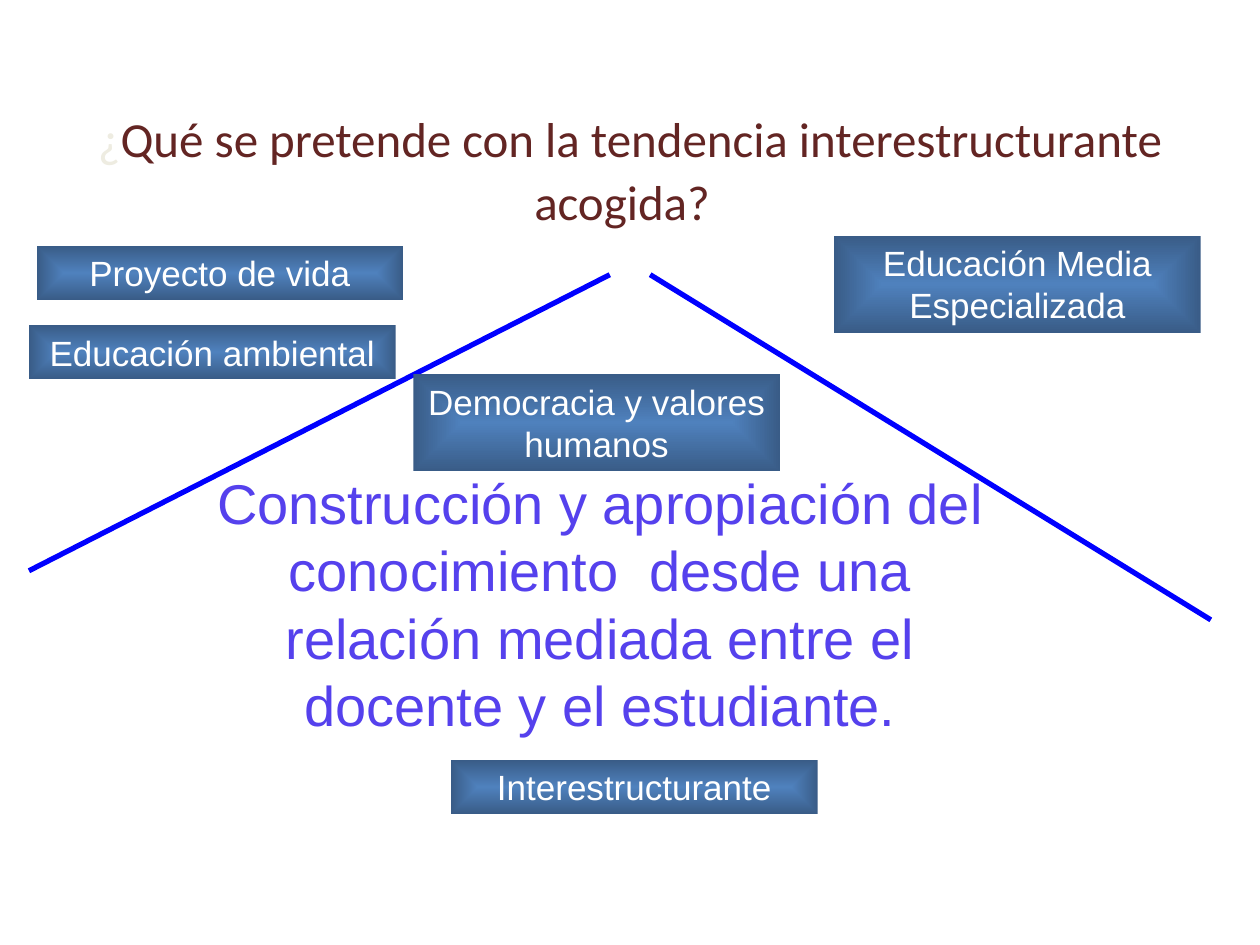
import pptx
import pptx.util
import pptx.dml.color
import pptx.enum.shapes
import pptx.enum.text
import pptx.oxml
import pptx.oxml.ns
import lxml.etree

COLS, ROWS = 100, 75
SHAPES = pptx.enum.shapes.MSO_SHAPE
ANCHOR = pptx.enum.text.MSO_ANCHOR
FIT = pptx.enum.text.MSO_AUTO_SIZE


def rgb(value):
    return pptx.dml.color.RGBColor.from_string(value)


def write(tf, *runs, font="Arial", size=20, color="FFFFFF", spacing=None,
          anchor=ANCHOR.TOP, fit=FIT.SHAPE_TO_FIT_TEXT):
    """Fill a frame with one centred paragraph of (text, format) runs."""
    tf.word_wrap = True
    tf.auto_size = fit
    tf.vertical_anchor = anchor
    p = tf.paragraphs[0]
    p.alignment = pptx.enum.text.PP_ALIGN.CENTER
    if spacing:
        p.line_spacing = spacing
    for text, style in runs:
        r = p.add_run()
        r.text = text
        r.font.name = font
        r.font.size = pptx.util.Pt(style.get("size", size))
        r.font.color.rgb = rgb(style.get("color", color))


class Board:
    """Style and current slide; lengths are grid columns and rows."""
    inner, outer, line_color = "4F81BD", "395C87", "0000FF"
    box_width = 29.1

    def __init__(self, prs):
        self.prs = prs
        self.slide = prs.slides.add_slide(prs.slide_layouts[6])

    def place(self, *lengths):
        units = (self.prs.slide_width / COLS, self.prs.slide_height / ROWS)
        return [round(n * units[i % 2]) for i, n in enumerate(lengths)]

    def text(self, left, top, width, height, *runs, **style):
        tb = self.slide.shapes.add_textbox(*self.place(left, top, width, height))
        write(tb.text_frame, *runs, **style)

    def box(self, left, top, text, lines=1):
        height = 4.3 if lines == 1 else 7.7
        sp = self.slide.shapes.add_shape(
            SHAPES.RECTANGLE, *self.place(left, top, self.box_width, height))
        sp.shadow.inherit = False
        sp.line.fill.background()
        self.glow(sp)
        write(sp.text_frame, (text, {}))

    def glow(self, sp):
        """Gradient that runs from the centre out to the edges."""
        sp.fill.gradient()
        stops = sp.fill.gradient_stops
        for stop, position, color in zip(stops, (0, 1), (self.inner, self.outer)):
            stop.position = position
            stop.color.rgb = rgb(color)
        qn = pptx.oxml.ns.qn
        grad = sp._element.spPr.find(qn("a:gradFill"))
        lin = grad.find(qn("a:lin"))
        path = lxml.etree.Element(qn("a:path"), path="shape")
        half = {side: "50000" for side in "ltrb"}
        lxml.etree.SubElement(path, qn("a:fillToRect"), **half)
        grad.replace(lin, path)

    def line(self, x1, y1, x2, y2):
        c = self.slide.shapes.add_connector(
            pptx.enum.shapes.MSO_CONNECTOR.STRAIGHT, *self.place(x1, y1, x2, y2))
        c.line.color.rgb = rgb(self.line_color)
        c.line.width = pptx.util.Pt(3)
        lxml.etree.SubElement(c._element.spPr, pptx.oxml.ns.qn("a:effectLst"))


def main():
    prs = pptx.Presentation()
    prs.slide_width = pptx.util.Inches(10)
    prs.slide_height = pptx.util.Inches(7.5)
    board = Board(prs)

    # Title
    board.text(5, 7.8, 90, 12.5,
               ("¿", {"color": "EEECE1"}),
               ("Qué se pretende con la tendencia interestructurante acogida?", {}),
               (" ", {"size": 40}),
               font="Calibri", size=28, color="632523", spacing=0.8,
               anchor=ANCHOR.MIDDLE, fit=FIT.NONE)

    # Roof lines
    board.line(48.4, 21.8, 2.3, 45.3)
    board.line(51.6, 21.8, 96.1, 49.2)

    # Central statement
    board.text(15.6, 36.7, 64.1, 22.6,
               ("Construcción y apropiación del conocimiento  desde una "
                "relación mediada entre el docente y el estudiante.", {}),
               size=32, color="5541ED")

    # Topic boxes
    board.box(35.8, 60.3, "Interestructurante")
    board.box(2.9, 19.5, "Proyecto de vida")
    board.box(32.8, 29.7, "Democracia y valores humanos", lines=2)
    board.box(66.2, 18.7, "Educación Media Especializada", lines=2)
    board.box(2.3, 25.8, "Educación ambiental")

    prs.save("out.pptx")


if __name__ == "__main__":
    main()
